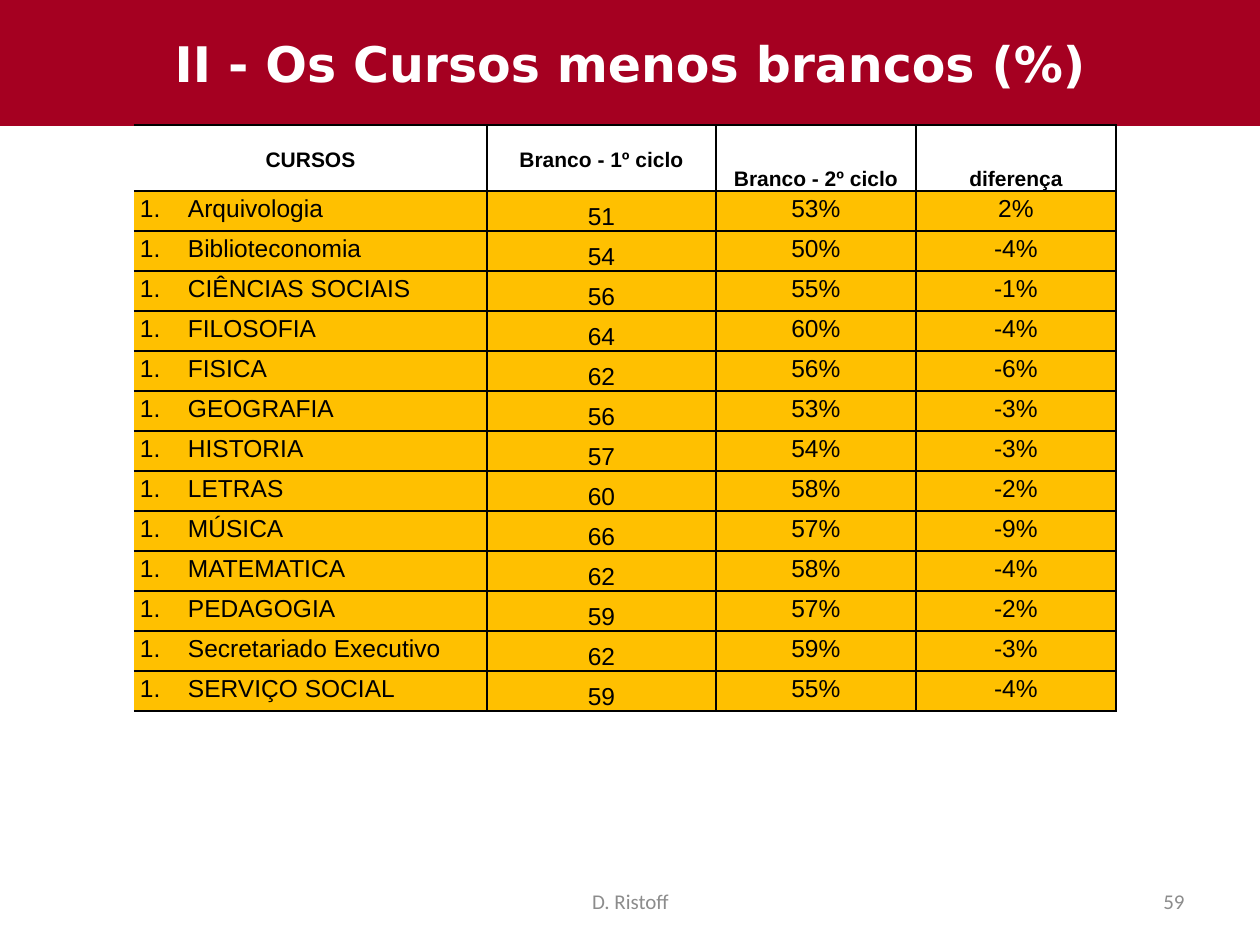
import pptx
import pptx.util
import pptx.dml.color
import pptx.enum.text
import pptx.oxml
import pptx.oxml.ns
from dataclasses import dataclass

ALIGN = pptx.enum.text.PP_ALIGN
ANCHOR = pptx.enum.text.MSO_ANCHOR
PX = 914400 / 126


@dataclass(frozen=True)
class Theme:
    red: str = "A50021"
    gold: str = "FFC000"
    white: str = "FFFFFF"
    black: str = "000000"
    gray: str = "8C8C8C"
    title: int = 28
    head: int = 12
    body: int = 14
    foot: int = 12


theme = Theme()


def px(num):
    return pptx.util.Emu(round(num * PX))


def style(para, font, size, color, align, bold=False):
    para.alignment = align
    para.font.name = font
    para.font.size = pptx.util.Pt(size)
    para.font.bold = bold
    para.font.color.rgb = pptx.dml.color.RGBColor.from_string(color)


deck = pptx.Presentation()
deck.slide_width, deck.slide_height = px(1260), px(945)
slide = deck.slides.add_slide(deck.slide_layouts[5])

# Title band
title = slide.shapes.title
title.left, title.top, title.width, title.height = px(0), px(0), px(1260), px(126)
title.fill.solid()
title.fill.fore_color.rgb = pptx.dml.color.RGBColor.from_string(theme.red)
title.text_frame.text = "II - Os Cursos menos brancos (%)"
title.text_frame.vertical_anchor = ANCHOR.MIDDLE
style(title.text_frame.paragraphs[0], "DejaVu Sans", theme.title, theme.white,
      ALIGN.CENTER, True)

# Footer and page number
for text, left, width, align in [
    ("D. Ristoff", 431, 399, ALIGN.CENTER),
    ("59", 903, 294, ALIGN.RIGHT),
]:
    frame = slide.shapes.add_textbox(px(left), px(876), px(width), px(50)).text_frame
    frame.word_wrap = True
    frame.vertical_anchor = ANCHOR.MIDDLE
    frame.text = text
    style(frame.paragraphs[0], "Calibri", theme.foot, theme.gray, align)

# Table of courses
heads = ("CURSOS", "Branco - 1º ciclo", "Branco - 2º ciclo", "diferença")
courses = [
    ("Arquivologia", 51, 53, 2),
    ("Biblioteconomia", 54, 50, -4),
    ("CIÊNCIAS SOCIAIS", 56, 55, -1),
    ("FILOSOFIA", 64, 60, -4),
    ("FISICA", 62, 56, -6),
    ("GEOGRAFIA", 56, 53, -3),
    ("HISTORIA", 57, 54, -3),
    ("LETRAS", 60, 58, -2),
    ("MÚSICA", 66, 57, -9),
    ("MATEMATICA", 62, 58, -4),
    ("PEDAGOGIA", 59, 57, -2),
    ("Secretariado Executivo", 62, 59, -3),
    ("SERVIÇO SOCIAL", 59, 55, -4),
]
rows = [heads] + [(name, str(first), f"{second}%", f"{diff}%")
                  for name, first, second, diff in courses]
widths = (353, 229, 200, 200)
head_high, row_high = 66, 40
high = head_high + row_high * len(courses)
head_anchors = (ANCHOR.MIDDLE, ANCHOR.MIDDLE, ANCHOR.BOTTOM, ANCHOR.BOTTOM)
body_anchors = (ANCHOR.TOP, ANCHOR.BOTTOM, ANCHOR.TOP, ANCHOR.TOP)
space = pptx.oxml.ns.nsdecls("a")
line = f'<a:solidFill><a:srgbClr val="{theme.black}"/></a:solidFill>'

table = slide.shapes.add_table(len(rows), len(widths), px(134), px(125),
                               px(sum(widths)), px(high)).table
table.first_row = table.horz_banding = False
for col, width in zip(table.columns, widths):
    col.width = px(width)

for r, row in enumerate(rows):
    is_head = r == 0
    table.rows[r].height = px(head_high if is_head else row_high)
    for c, text in enumerate(row):
        cell = table.cell(r, c)
        cell.text = text
        cell.margin_left = cell.margin_right = px(6)
        cell.margin_top = cell.margin_bottom = 0
        cell.vertical_anchor = (head_anchors if is_head else body_anchors)[c]
        props = cell._tc.get_or_add_tcPr()
        for side in "LRTB":
            paint = "<a:noFill/>" if side == "L" and c == 0 else line
            props.append(pptx.oxml.parse_xml(
                f'<a:ln{side} {space} w="12700">{paint}</a:ln{side}>'))
        if is_head:
            cell.fill.background()
        else:
            cell.fill.solid()
            cell.fill.fore_color.rgb = pptx.dml.color.RGBColor.from_string(theme.gold)
        para = cell.text_frame.paragraphs[0]
        para.line_spacing = 1.15
        listed = c == 0 and not is_head
        style(para, "Arial", theme.head if is_head else theme.body, theme.black,
              ALIGN.LEFT if listed else ALIGN.CENTER, is_head)
        if listed:
            mark = para._p.get_or_add_pPr()
            mark.set("marL", str(px(48)))
            mark.set("indent", str(px(-48)))
            mark.find(pptx.oxml.ns.qn("a:defRPr")).addprevious(pptx.oxml.parse_xml(
                f'<a:buAutoNum {space} type="arabicPeriod"/>'))

deck.save("out.pptx")
